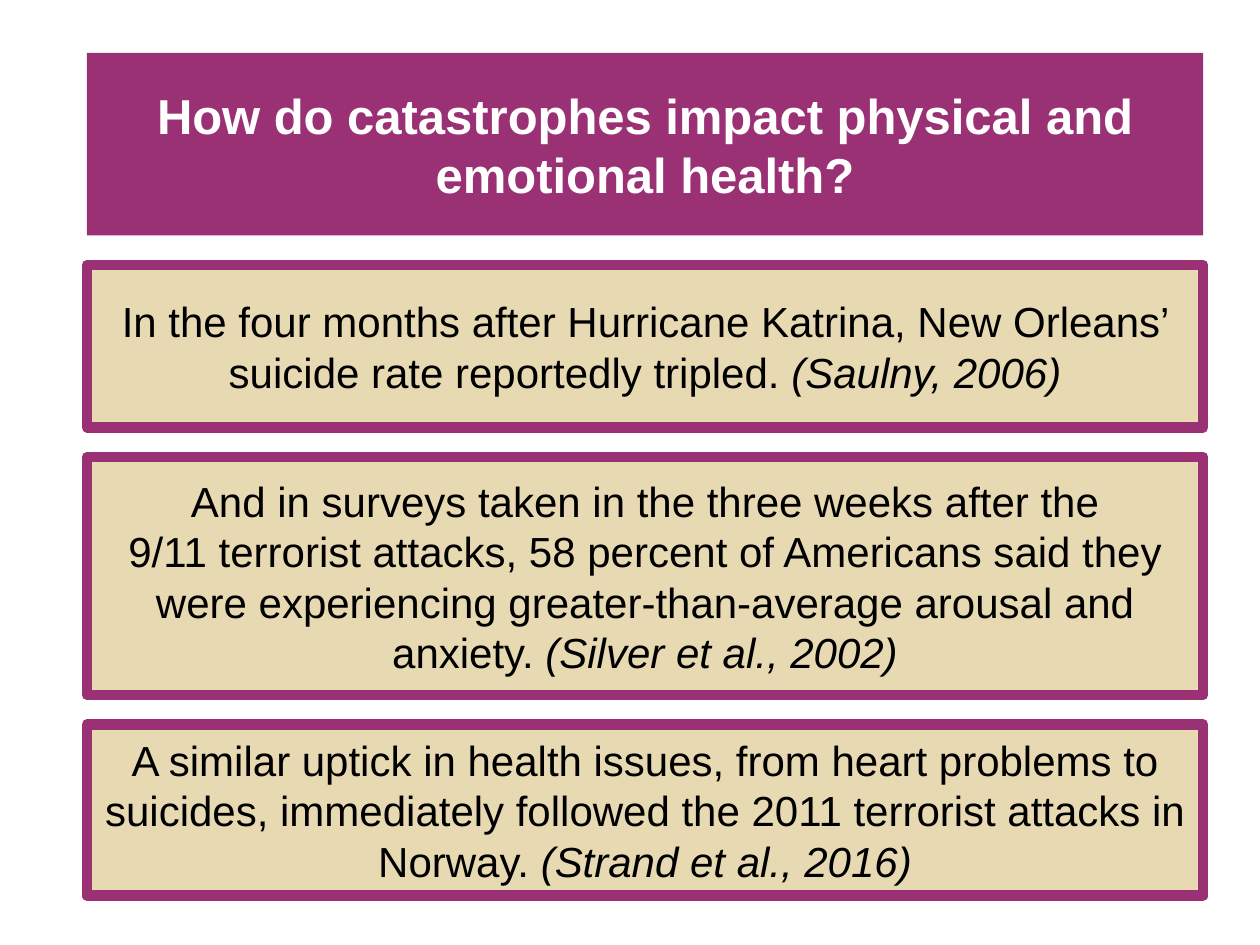
from dataclasses import dataclass

from pptx import Presentation
from pptx.dml.color import RGBColor
from pptx.enum.shapes import MSO_SHAPE
from pptx.enum.text import MSO_ANCHOR, PP_ALIGN
from pptx.slide import Slide
from pptx.util import Pt

COLORS = {"plum": "9B3175", "sand": "E7D9B1", "white": "FFFFFF", "black": "000000"}
LEFT, TOP, WIDTH, GAP = 49.7, 30.2, 637.9, 16.8


@dataclass
class Panel:
    height: float
    paragraphs: list[str]
    citation: str = ""
    fill: str = "sand"
    color: str = "black"
    size: float = 24
    bold: bool = False
    border: float = 6


PANELS = [
    Panel(104.4, ["How do catastrophes impact physical and emotional health?"],
          fill="plum", color="white", size=28, bold=True, border=0),
    Panel(92.9, ["In the four months after Hurricane Katrina, New Orleans’ "
                 "suicide rate reportedly tripled. "], "(Saulny, 2006)"),
    Panel(136.1, ["And in surveys taken in the three weeks after the",
                  "9/11 terrorist attacks, 58 percent of Americans said they were "
                  "experiencing greater-than-average arousal and anxiety. "],
          "(Silver et al., 2002)"),
    Panel(97.9, ["A similar uptick in health issues, from heart problems to suicides, "
                 "immediately followed the 2011 terrorist attacks in Norway. "],
          "(Strand et al., 2016)"),
]


def rgb(name: str) -> RGBColor:
    return RGBColor.from_string(COLORS[name])


def add_run(p, text: str, panel: Panel, italic: bool = False) -> None:
    r = p.add_run()
    r.text = text
    r.font.name = "Arial"
    r.font.size = Pt(panel.size)
    r.font.bold = panel.bold
    r.font.italic = italic
    r.font.color.rgb = rgb(panel.color)


def add_panel(s: Slide, panel: Panel, top: float) -> None:
    sp = s.shapes.add_shape(MSO_SHAPE.RECTANGLE, Pt(LEFT), Pt(top),
                            Pt(WIDTH), Pt(panel.height))
    sp.shadow.inherit = False
    sp.fill.solid()
    sp.fill.fore_color.rgb = rgb(panel.fill)
    if panel.border:
        sp.line.color.rgb = rgb("plum")
        sp.line.width = Pt(panel.border)
    else:
        sp.line.fill.background()

    tf = sp.text_frame
    tf.word_wrap = True
    tf.vertical_anchor = MSO_ANCHOR.MIDDLE
    for i, text in enumerate(panel.paragraphs):
        p = tf.add_paragraph() if i else tf.paragraphs[0]
        p.alignment = PP_ALIGN.CENTER
        add_run(p, text, panel)
    if panel.citation:
        add_run(p, panel.citation, panel, italic=True)


def main() -> None:
    prs = Presentation()
    prs.slide_width, prs.slide_height = Pt(720), Pt(540)
    s = prs.slides.add_slide(prs.slide_layouts[6])
    top = TOP
    for panel in PANELS:
        add_panel(s, panel, top)
        top += panel.height + GAP
    prs.save("out.pptx")


if __name__ == "__main__":
    main()
